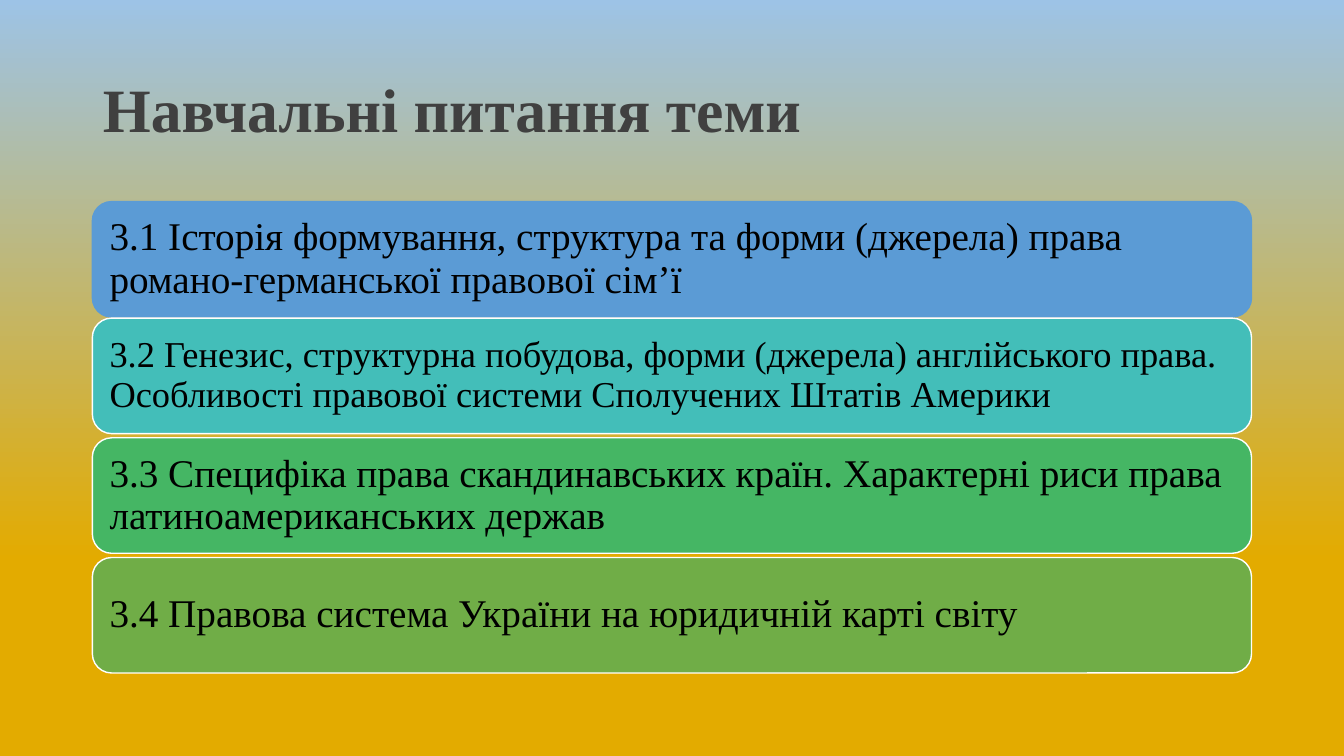
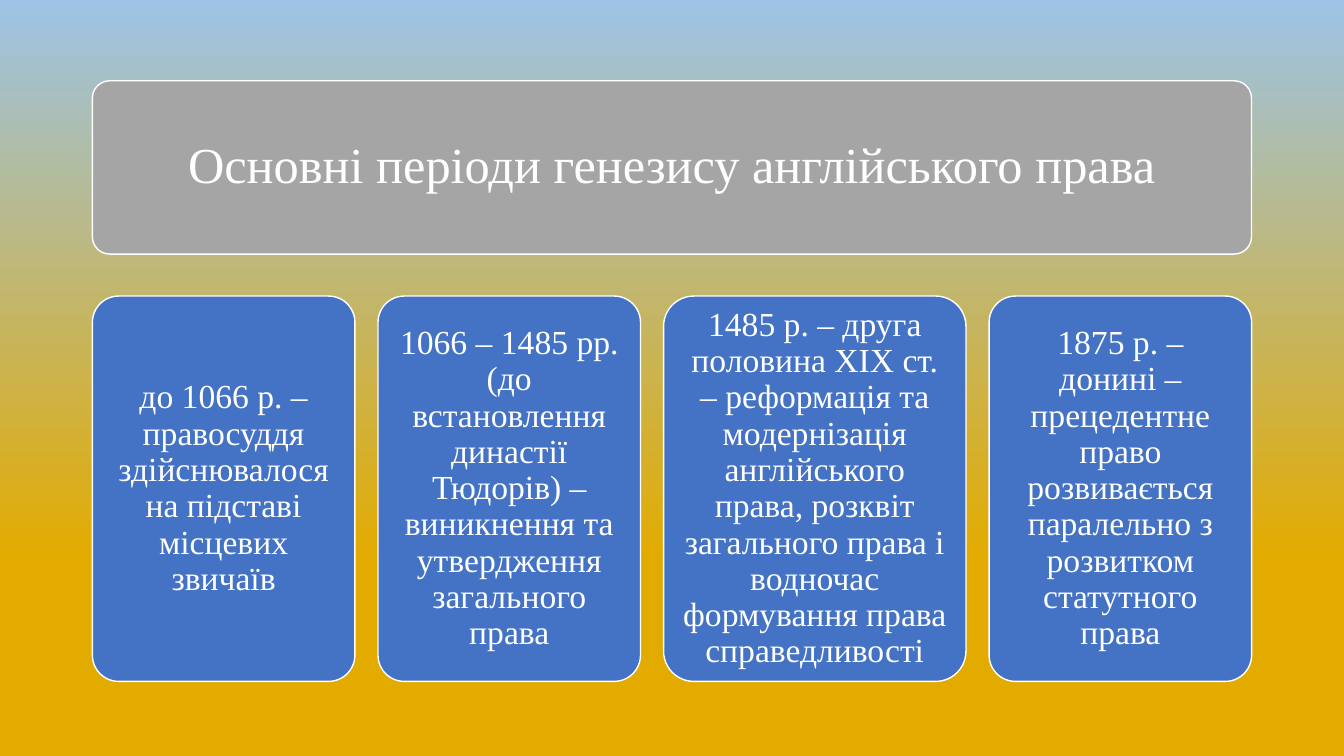
from pptx import Presentation
from pptx.dml.color import RGBColor
from pptx.enum.shapes import MSO_SHAPE as SHAPE
from pptx.enum.text import MSO_ANCHOR as ANCHOR, MSO_AUTO_SIZE as AUTO_SIZE, PP_ALIGN as ALIGN
from pptx.util import Emu, Pt

FONT = "Times New Roman"
SKY, GOLD = "9DC3E6", "E3AB00"
WHITE, BLACK, DARK = "FFFFFF", "000000", "404040"
GREY, BLUE = "A5A5A5", "4472C4"

LEFT, WIDTH = 88, 1104  # content area shared by both slides

# top, text size, fill, outline, text
QUESTIONS = [
    (192, 28, "5B9BD5", "5B9BD5",
     "3.1 Історія формування, структура та форми (джерела) права "
     "романо-германської правової сім’ї"),
    (303, 26, "43BEB9", WHITE,
     "3.2 Генезис, структурна побудова, форми (джерела) англійського права. "
     "Особливості правової системи Сполучених Штатів Америки"),
    (417, 28, "45B664", WHITE,
     "3.3 Специфіка права скандинавських країн. Характерні риси права "
     "латиноамериканських держав"),
    (531, 28, "70AD47", WHITE,
     "3.4 Правова система України на юридичній карті світу"),
]

# width, text
PERIODS = [
    (250, "до 1066 р. – правосуддя здійснювалося на підставі місцевих звичаїв"),
    (250, "1066 – 1485 рр. (до встановлення династії Тюдорів) – виникнення та "
          "утвердження загального права"),
    (288, "1485 р. – друга половина ХІХ ст. – реформація та модернізація "
          "англійського права, розквіт загального права і водночас "
          "формування права справедливості"),
    (250, "1875 р. – донині – прецедентне право розвивається паралельно з "
          "розвитком статутного права"),
]


def px(n):
    return Emu(n * 9525)


def rgb(color):
    return RGBColor.from_string(color)


def set_background(master):
    fill = master.background.fill
    fill.gradient()
    fill.gradient_angle = 90
    for stop, position, color in zip(fill.gradient_stops, (0.26, 1), (GOLD, SKY)):
        stop.position = position
        stop.color.rgb = rgb(color)


def write(sp, text, size, color, align=ALIGN.LEFT, bold=False, inset=10):
    tf = sp.text_frame
    tf.word_wrap = True
    tf.auto_size = AUTO_SIZE.NONE
    tf.vertical_anchor = ANCHOR.MIDDLE
    tf.margin_left = tf.margin_right = px(inset)
    tf.margin_top = tf.margin_bottom = px(inset)
    p = tf.paragraphs[0]
    p.alignment = align
    p.line_spacing = 0.9
    r = p.add_run()
    r.text = text
    r.font.name = FONT
    r.font.size = Pt(size)
    r.font.bold = bold
    r.font.color.rgb = rgb(color)


def add_title(s, text, box, size, color, **style):
    sp = s.shapes.title
    sp.left, sp.top, sp.width, sp.height = map(px, box)
    write(sp, text, size, color, **style)
    return sp


def add_card(s, box, fill, line=WHITE, corner=0.1):
    sp = s.shapes.add_shape(SHAPE.ROUNDED_RECTANGLE, *map(px, box))
    sp.adjustments[0] = corner
    sp.shadow.inherit = False
    sp.fill.solid()
    sp.fill.fore_color.rgb = rgb(fill)
    sp.line.color.rgb = rgb(line)
    sp.line.width = Pt(1)
    return sp


def build_questions(s):
    add_title(s, "Навчальні питання теми", (LEFT, 38, WIDTH, 139), 44, DARK, bold=True)
    for top, size, fill, line, text in QUESTIONS:
        sp = add_card(s, (LEFT, top, WIDTH, 110), fill, line, corner=0.1667)
        write(sp, text, size, BLACK, inset=11)


def build_periods(s):
    # Banner sits behind the title
    box = (LEFT, 77, WIDTH, 165)
    banner = add_card(s, box, GREY)
    title = add_title(s, "Основні періоди генезису англійського права", box,
                      36, WHITE, align=ALIGN.CENTER, inset=19)
    title.element.addprevious(banner.element)

    # Columns fill the content width with equal gaps
    gap = (WIDTH - sum(width for width, _ in PERIODS)) // (len(PERIODS) - 1)
    left = LEFT
    for width, text in PERIODS:
        sp = add_card(s, (left, 282, width, 367), BLUE)
        write(sp, text, 24, WHITE, align=ALIGN.CENTER)
        left += width + gap


def main():
    prs = Presentation()
    prs.slide_width, prs.slide_height = px(1280), px(720)
    set_background(prs.slide_master)
    title_only = prs.slide_layouts.get_by_name("Title Only")
    for build in (build_questions, build_periods):
        build(prs.slides.add_slide(title_only))
    prs.save("out.pptx")


if __name__ == "__main__":
    main()
